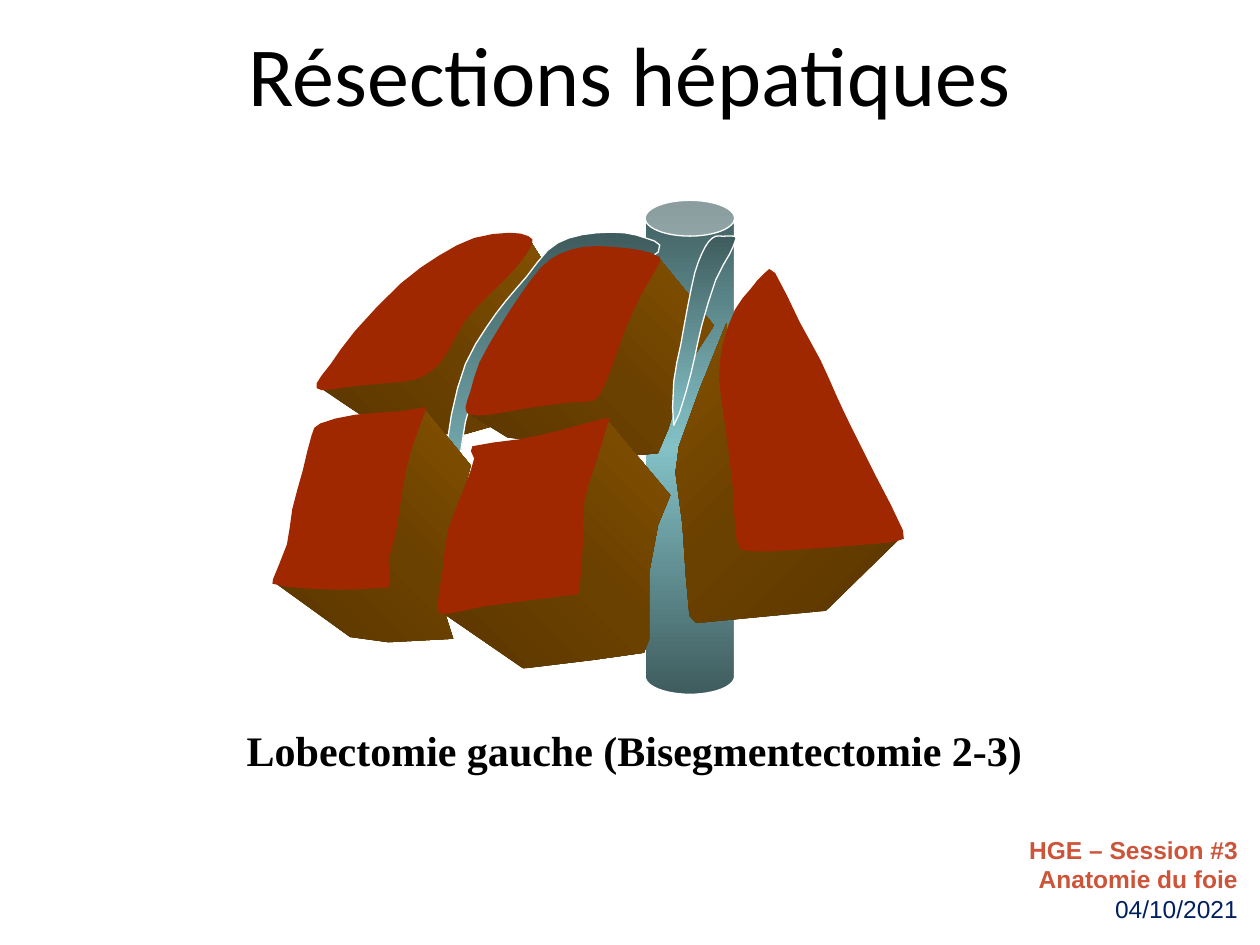
from copy import deepcopy

from pptx import Presentation
from pptx.dml.color import RGBColor
from pptx.enum.shapes import MSO_SHAPE
from pptx.enum.text import MSO_ANCHOR, PP_ALIGN
from pptx.util import Pt

CAN = MSO_SHAPE.CAN
TOP = MSO_ANCHOR.TOP
CENTER, RIGHT = PP_ALIGN.CENTER, PP_ALIGN.RIGHT

RED, BROWN, UMBER, DARK = "A02800", "825000", "6B4100", "5A3600"
DEEP, TEAL, WHITE = "3F5C5E", "83C1C6", "FFFFFF"

# Outlines in points; each block has a body and a front face
VEIN_MID = [
    (369, 136), (357, 133), (341, 133), (325, 136), (313, 143), (301, 158),
    (289, 172), (278, 187), (266, 208), (258, 237), (254, 270), (254, 302),
    (262, 267), (266, 241), (274, 219), (294, 187), (305, 172), (317, 158),
    (333, 147), (353, 143), (372, 147), (377, 140)]
VEIN_LEFT = [
    (413, 135), (409, 135), (405, 138), (401, 145), (397, 156), (393, 175),
    (389, 197), (385, 218), (385, 243), (392, 224), (397, 204), (401, 186),
    (409, 160), (417, 145), (420, 138), (420, 135)]
REAR_LEFT = (
    [(182, 221), (206, 237), (255, 248), (266, 248), (280, 244), (278, 215),
     (285, 190), (296, 168), (309, 147), (302, 136), (260, 180), (235, 215)],
    [(181, 219), (189, 208), (203, 189), (229, 162), (251, 146), (271, 136),
     (291, 133), (302, 135), (304, 140), (294, 154), (280, 168), (266, 183),
     (257, 199), (249, 210), (237, 217), (220, 219), (200, 221), (184, 223)])
REAR_MID = (
    [(267, 236), (290, 250), (366, 260), (376, 259), (382, 245), (388, 225),
     (397, 203), (408, 186), (377, 148), (345, 190), (325, 225)],
    [(266, 233), (269, 223), (274, 207), (286, 186), (297, 169), (309, 153),
     (320, 145), (334, 141), (349, 141), (366, 143), (375, 146), (377, 150),
     (366, 169), (357, 189), (350, 209), (344, 223), (339, 229), (326, 230),
     (303, 233), (280, 237), (269, 237)])
FRONT_LEFT = (
    [(157, 333), (200, 364), (222, 367), (259, 365), (251, 340), (260, 300),
     (269, 266), (242, 233), (220, 280), (210, 330)],
    [(156, 331), (164, 311), (167, 291), (173, 269), (178, 249), (183, 242),
     (203, 237), (229, 235), (241, 233), (243, 235), (235, 257), (230, 280),
     (226, 306), (222, 320), (223, 334), (217, 336), (194, 337), (171, 336),
     (158, 334)])
FRONT_MID = (
    [(251, 349), (299, 382), (340, 377), (368, 373), (371, 365), (371, 327),
     (376, 300), (383, 283), (347, 240), (325, 290), (315, 335)],
    [(270, 255), (297, 251), (320, 246), (346, 239), (347, 243), (340, 266),
     (334, 286), (333, 311), (331, 337), (326, 340), (303, 343), (274, 347),
     (254, 351), (250, 346), (253, 326), (256, 303), (266, 277), (271, 262)])
RIGHT_LOBE = (
    [(415, 185), (400, 222), (388, 255), (386, 270), (390, 300), (392, 330),
     (394, 352), (398, 356), (440, 352), (472, 349), (515, 307), (430, 300)],
    [(411, 217), (413, 197), (420, 177), (429, 165), (437, 156), (443, 156),
     (457, 184), (469, 206), (478, 226), (486, 243), (500, 271), (516, 303),
     (513, 309), (497, 311), (457, 314), (429, 315), (421, 309), (419, 280),
     (414, 240)])


def rgb(code):
    return RGBColor.from_string(code)


def paint(shape, tones, edge=None, angle=270):
    """Fill with one colour or an even gradient, with an optional outline."""
    shape.shadow.inherit = False
    fill = shape.fill
    if len(tones) == 1:
        fill.solid()
        fill.fore_color.rgb = rgb(tones[0])
    else:
        fill.gradient()
        fill.gradient_angle = angle
        last = fill.gradient_stops[1]._gs
        for _ in tones[2:]:
            last.addnext(deepcopy(last))
        for i, (stop, tone) in enumerate(zip(fill.gradient_stops, tones)):
            stop.color.rgb = rgb(tone)
            stop.position = i / (len(tones) - 1)
    if edge:
        shape.line.color.rgb = rgb(edge)
        shape.line.width = Pt(0.75)
    else:
        shape.line.fill.background()


def curve(dots):
    """Closed outline with a smooth midpoint between neighbouring dots."""
    out = []
    for i, b in enumerate(dots):
        a, c, d = dots[i - 1], dots[(i + 1) % len(dots)], dots[(i + 2) % len(dots)]
        out += [b, tuple((9 * (q + r) - p - s) / 16
                         for p, q, r, s in zip(a, b, c, d))]
    return out


def trace(slide, dots, tones, edge=None, angle=270):
    first, *rest = [(Pt(x), Pt(y)) for x, y in dots]
    pen = slide.shapes.build_freeform(*first)
    pen.add_line_segments(rest, close=True)
    paint(pen.convert_to_shape(), tones, edge, angle)


def block(slide, body, face, angle=45):
    trace(slide, body, [DARK, UMBER, BROWN], angle=angle)
    trace(slide, curve(face), [RED])


def vein(slide, dots):
    trace(slide, curve(dots), [DEEP, TEAL], WHITE)


def trunk(slide):
    can = slide.shapes.add_shape(CAN, Pt(368.64), Pt(114.48), Pt(51.12), Pt(282.24))
    can.adjustments[0] = 0.4
    paint(can, [DEEP, TEAL, DEEP], WHITE)


def write(shape, rows, font, size, align, wrap=True):
    """Rows are (text, colour, bold)."""
    frame = shape.text_frame
    frame.word_wrap = wrap
    frame.vertical_anchor = TOP
    for i, (text, tone, bold) in enumerate(rows):
        para = frame.add_paragraph() if i else frame.paragraphs[0]
        para.text = text
        para.alignment = align
        para.font.name = font
        para.font.size = Pt(size)
        para.font.bold = bold
        para.font.color.rgb = rgb(tone)


def place(shape, left, top, width, height):
    shape.left, shape.top = Pt(left), Pt(top)
    shape.width, shape.height = Pt(width), Pt(height)


def label(slide, box, *args):
    write(slide.shapes.add_textbox(*map(Pt, box)), *args)


def main():
    deck = Presentation()
    deck.slide_width, deck.slide_height = Pt(720), Pt(540)
    slide = deck.slides.add_slide(deck.slide_layouts[5])

    # Session footer
    label(slide, (524.5, 473.5, 190, 40),
          [("HGE – Session #3 Anatomie du foie", "CC5439", True),
           ("04/10/2021", "002060", False)], "Arial", 14, RIGHT)

    # Liver, from back to front
    trunk(slide)
    block(slide, *REAR_LEFT)
    vein(slide, VEIN_MID)
    block(slide, *REAR_MID)
    vein(slide, VEIN_LEFT)
    block(slide, *RIGHT_LOBE, angle=135)
    block(slide, *FRONT_LEFT)
    block(slide, *FRONT_MID)

    # Title and caption
    title = slide.shapes.title
    place(title, 132, 9.36, 456, 65.5)
    write(title, [("Résections hépatiques", "000000", False)],
          "Calibri", 48, CENTER, False)
    label(slide, (116, 410.4, 493.2, 36),
          [("Lobectomie gauche (Bisegmentectomie 2-3)", "000000", True)],
          "Times New Roman", 24, CENTER)

    deck.save("out.pptx")


if __name__ == "__main__":
    main()
